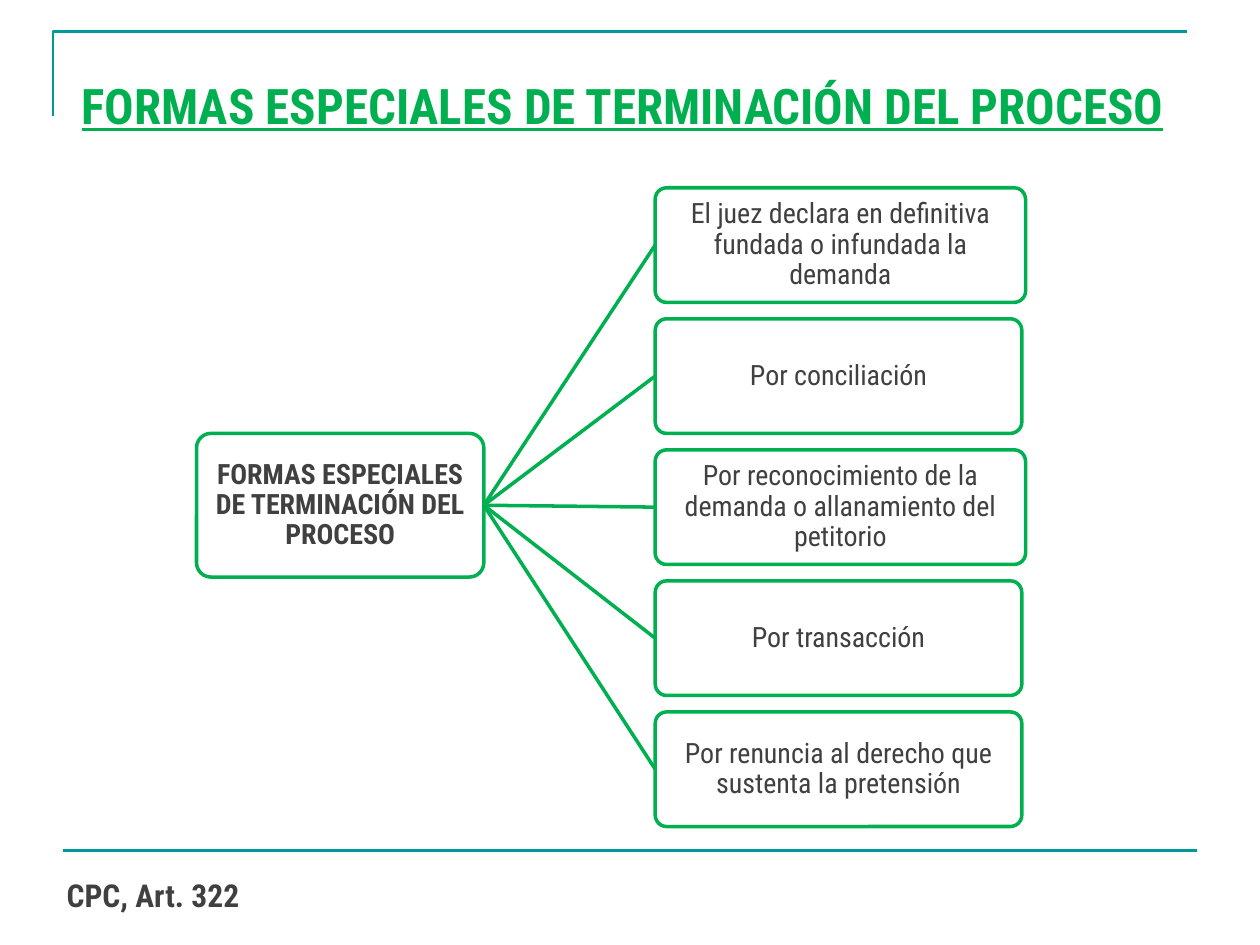
from dataclasses import dataclass

from pptx import Presentation
from pptx import util as u
from pptx.dml import color
from pptx.enum import shapes, text
from pptx.oxml import ns, xmlchemy


@dataclass(frozen=True)
class Theme:
    font: str = "Roboto Condensed"
    green: str = "00B050"
    teal: str = "009999"
    ink: str = "404040"
    head: int = 28
    note: int = 18
    body: int = 16
    rule: float = 1.5
    edge: float = 2


@dataclass(frozen=True)
class Node:
    words: str
    left: float
    top: float
    width: float
    height: float
    bold: bool = False


THEME = Theme()
ROOT = Node("FORMAS ESPECIALES DE TERMINACIÓN DEL PROCESO",
            1.56, 3.44, 2.28, 1.14, True)
FORMS = (
    ("El juez declara en definitiva fundada o infundada la demanda", 2.94),
    ("Por conciliación", 2.91),
    ("Por reconocimiento de la demanda o allanamiento del petitorio", 2.94),
    ("Por transacción", 2.91),
    ("Por renuncia al derecho que sustenta la pretensión", 2.91),
)
LEFT, TOP, STEP, TALL = 5.2, 1.49, 1.04, 0.91


def rgb(code: str) -> color.RGBColor:
    return color.RGBColor.from_string(code)


def stroke(item, code: str, width: float) -> None:
    item.line.color.rgb = rgb(code)
    item.line.width = u.Pt(width)


def write(frame, words: str, size: int, code: str, bold: bool = True):
    frame.word_wrap = True
    para = frame.paragraphs[0]
    para.text = words
    font = para.runs[0].font
    font.name, font.size, font.bold = THEME.font, u.Pt(size), bold
    font.color.rgb = rgb(code)
    return para


def add_text(slide, box: tuple[float, ...], words: str, size: int, code: str):
    frame = slide.shapes.add_textbox(*map(u.Inches, box)).text_frame
    return write(frame, words, size, code)


def add_node(slide, node: Node):
    box = map(u.Inches, (node.left, node.top, node.width, node.height))
    card = slide.shapes.add_shape(shapes.MSO_SHAPE.ROUNDED_RECTANGLE, *box)
    card.adjustments[0] = 0.1
    card.shadow.inherit = False
    card.fill.background()
    stroke(card, THEME.green, THEME.edge)
    frame = card.text_frame
    frame.margin_left = frame.margin_right = u.Inches(0.04)
    frame.margin_top = frame.margin_bottom = u.Inches(0.04)
    frame.vertical_anchor = text.MSO_ANCHOR.MIDDLE
    para = write(frame, node.words, THEME.body, THEME.ink, node.bold)
    para.alignment = text.PP_ALIGN.CENTER
    para.line_spacing = 0.9
    return card


def add_line(slide, ends: tuple[float, ...], code: str, width: float):
    line = slide.shapes.add_connector(
        shapes.MSO_CONNECTOR.STRAIGHT, *map(u.Inches, ends))
    stroke(line, code, width)
    props = line._element.spPr
    props.append(xmlchemy.OxmlElement("a:effectLst"))
    return line


def add_link(slide, start, end) -> None:
    line = add_line(slide, (0, 0, 1, 1), THEME.green, THEME.edge)
    line.begin_connect(start, 3)
    line.end_connect(end, 1)


def add_frame(slide) -> None:
    pen = slide.shapes.build_freeform(
        u.Inches(0.42), u.Inches(0.92))
    corner = ((0.42, 0.25), (9.42, 0.25))
    pen.add_line_segments(
        [(u.Inches(x), u.Inches(y)) for x, y in corner], close=False)
    rule = pen.convert_to_shape()
    rule.shadow.inherit = False
    rule.fill.background()
    stroke(rule, THEME.teal, THEME.rule)
    add_line(slide, (0.5, 6.75, 9.5, 6.75), THEME.teal, THEME.rule)


def main() -> None:
    deck = Presentation()
    deck.slide_width, deck.slide_height = u.Inches(10), u.Inches(7.5)
    slide = deck.slides.add_slide(deck.slide_layouts[6])
    add_frame(slide)

    title = add_text(slide, (0.55, 0.55, 9, 0.87), ROOT.words,
                     THEME.head, THEME.green)
    title.alignment = text.PP_ALIGN.JUSTIFY
    title.runs[0].font.underline = True
    add_text(slide, (0.43, 6.9, 1.81, 0.4), "CPC, Art. 322",
             THEME.note, THEME.ink)

    root = add_node(slide, ROOT)
    for row, (words, width) in enumerate(FORMS):
        node = Node(words, LEFT, TOP + row * STEP, width, TALL)
        add_link(slide, root, add_node(slide, node))
    deck.save("out.pptx")


if __name__ == "__main__":
    main()
